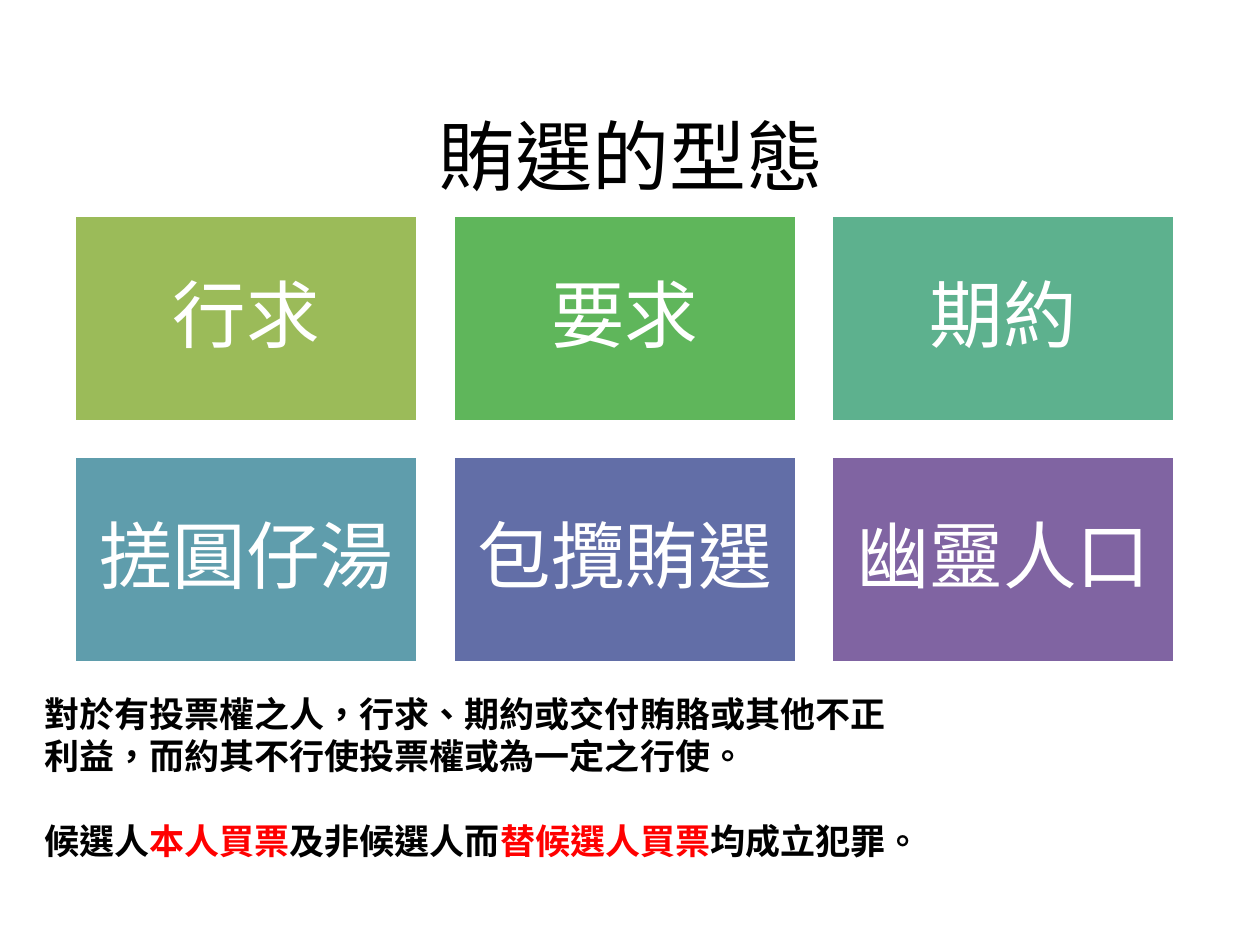
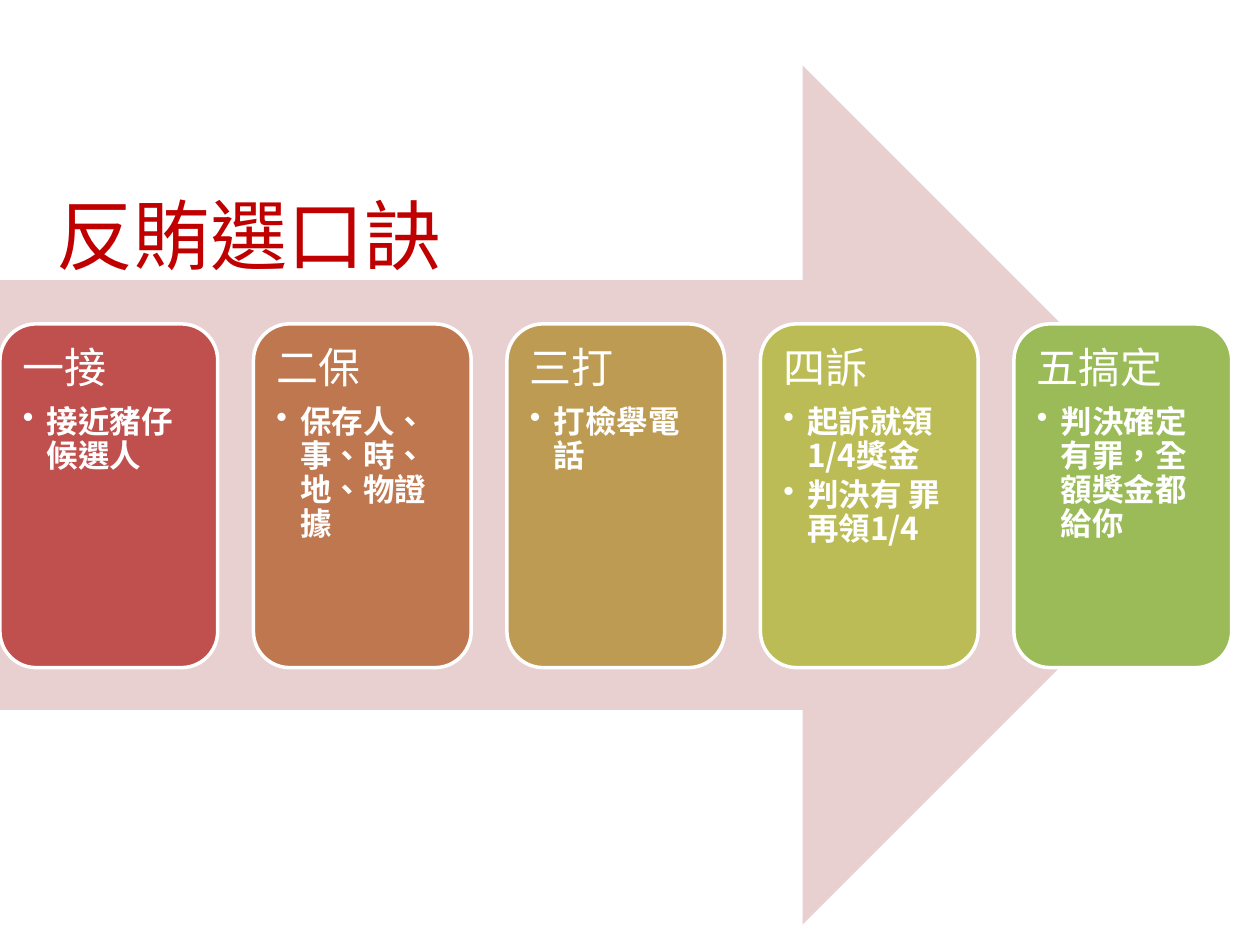
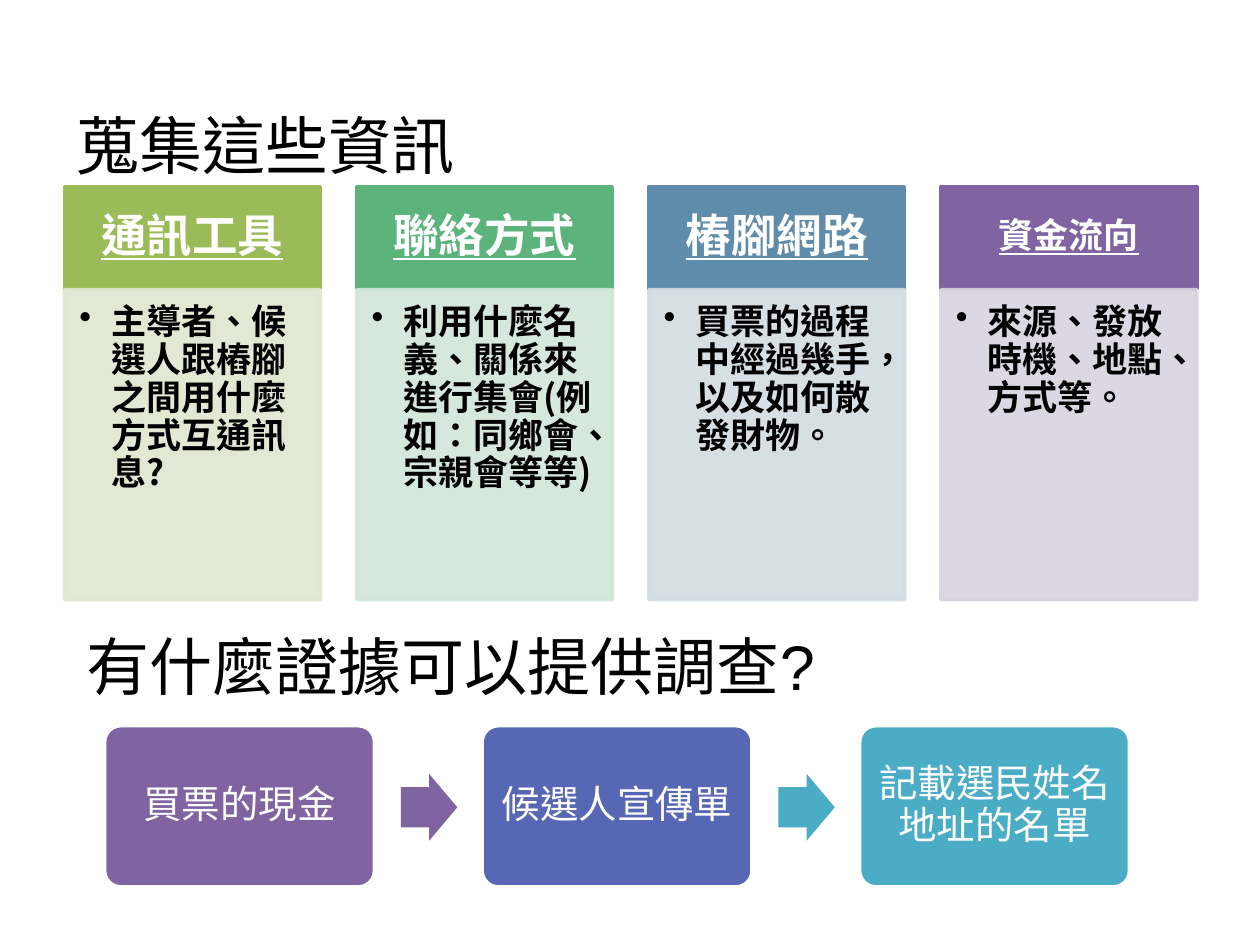
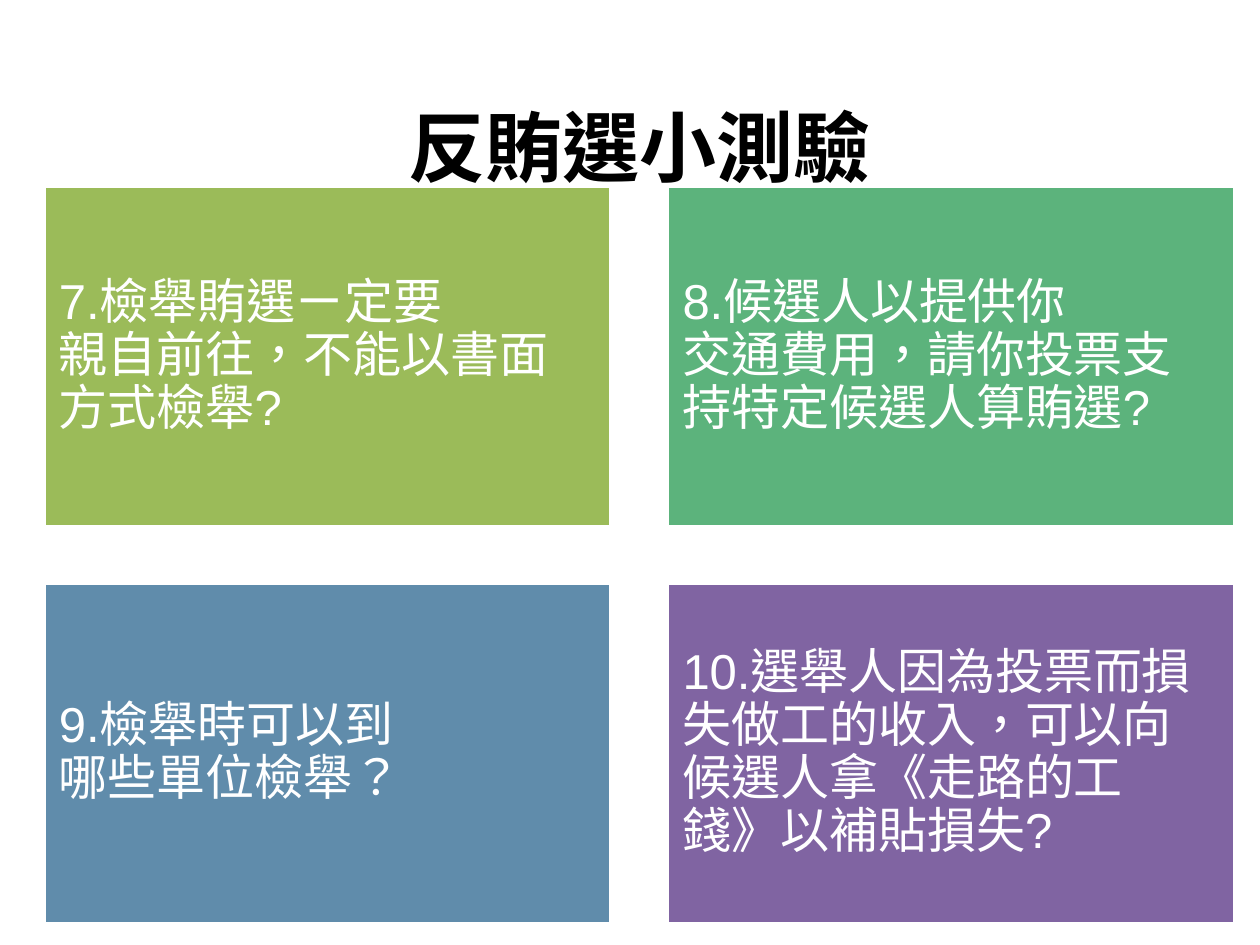
from lxml import etree
from pptx import Presentation, util as u
from pptx.dml.color import RGBColor
from pptx.enum import lang, shapes, text
from pptx.oxml.ns import qn

COLORS = {
    "black": "000000", "white": "FFFFFF", "red": "FF0000", "crimson": "C00000",
    "olive": "9BBB59", "green": "5FB65B", "teal": "5DB18E", "aqua": "5F9DAC",
    "indigo": "626EA7", "purple": "8064A2", "mint": "5CB37C", "steel": "608CAB",
    "brick": "C0504D", "rust": "BF7750", "ochre": "BD9B53", "lime": "BCBC56",
    "blush": "E8D0D0", "violet": "5767B4", "cyan": "4BACC6",
    "pale_olive": "DEE7D1", "pale_mint": "D2E5D9",
    "pale_steel": "D2DCE2", "pale_purple": "D8D3E0",
}
LIGHT, HEAVY = "Arial", "Noto Sans CJK SC"
LEFT, CENTER = text.PP_ALIGN.LEFT, text.PP_ALIGN.CENTER
TOP, MIDDLE = text.MSO_ANCHOR.TOP, text.MSO_ANCHOR.MIDDLE
RECT = shapes.MSO_SHAPE.RECTANGLE
ROUND = shapes.MSO_SHAPE.ROUNDED_RECTANGLE
ARROW = shapes.MSO_SHAPE.RIGHT_ARROW


def add_part(slide, box, kind=None, fill=None, line=None):
    lengths = [u.Cm(length) for length in box]
    if kind is None:
        return slide.shapes.add_textbox(*lengths)
    part = slide.shapes.add_shape(kind, *lengths)
    part.shadow.inherit = False
    part.fill.solid()
    part.fill.fore_color.rgb = RGBColor.from_string(COLORS[fill])
    if line:
        part.line.color.rgb = RGBColor.from_string(COLORS[line])
        part.line.width = u.Pt(2)
    else:
        part.line.fill.background()
    return part


def write(part, lines, size, color="white", font=LIGHT, bold=False, align=LEFT,
          anchor=MIDDLE, insets=(0.25, 0.13, 0.25, 0.13), spacing=0.9, bullet=None):
    frame = part.text_frame
    frame.word_wrap = True
    frame.vertical_anchor = anchor
    (frame.margin_left, frame.margin_top,
     frame.margin_right, frame.margin_bottom) = [u.Cm(inset) for inset in insets]
    if frame.text:
        paragraphs = [frame.add_paragraph() for _ in lines]
    else:
        paragraphs = [frame.paragraphs[0]] + [frame.add_paragraph() for _ in lines[1:]]
    for paragraph, line in zip(paragraphs, lines):
        paragraph.text = line
        paragraph.alignment = align
        paragraph.line_spacing = spacing
        if bullet:
            properties = paragraph._p.get_or_add_pPr()
            properties.set("marL", str(u.Cm(bullet)))
            properties.set("indent", str(-u.Cm(bullet)))
            etree.SubElement(properties, qn("a:buChar"), char="•")
            paragraph.space_after = u.Pt(3)
        for run in paragraph.runs:
            run.font.name = font
            run.font.size = u.Pt(size)
            run.font.bold = bold
            run.font.language_id = lang.MSO_LANGUAGE_ID.TRADITIONAL_CHINESE
            run.font.color.rgb = RGBColor.from_string(COLORS[color])
    return paragraphs


deck = Presentation()
deck.slide_width, deck.slide_height = u.Cm(25.4), u.Cm(19.05)
blank = deck.slide_layouts[6]
types, slogan, evidence, quiz = [deck.slides.add_slide(blank) for _ in range(4)]

titles = [
    (types, "賄選的型態", 1.3, 1.52, 44, "black", CENTER, False),
    (slogan, "反賄選口訣", 0.89, 3.12, 44, "crimson", LEFT, False),
    (evidence, "蒐集這些資訊", 1.3, 1.32, 36, "black", LEFT, False),
    (quiz, "反賄選小測驗", 1.47, 1.35, 44, "black", CENTER, True),
]

bribery_types = [
    ("行求", "olive"), ("要求", "green"), ("期約", "teal"),
    ("搓圓仔湯", "aqua"), ("包攬賄選", "indigo"), ("幽靈人口", "purple"),
]
for i, (label, color) in enumerate(bribery_types):
    row, column = divmod(i, 3)
    tile = add_part(types, (1.5 + 7.63 * column, 4.34 + 4.86 * row, 6.93, 4.16),
                    RECT, color, "white")
    write(tile, [label], 42, align=CENTER, insets=[0.43] * 4)

law = add_part(types, (0.64, 13.84, 18.16, 5.2))
statute, offence = write(law, [
    "對於有投票權之人，行求、期約或交付賄賂或其他不正利益，而約其不行使投票權或為一定之行使。",
    "候選人",
], 20, "black", HEAVY, True, anchor=TOP, spacing=1.0)
offence.space_before = u.Pt(24)
for words, color in [("本人買票", "red"), ("及非候選人而", "black"),
                     ("替候選人買票", "red"), ("均成立犯罪。", "black")]:
    phrase = offence.add_run()
    phrase.text = words
    phrase.font.name, phrase.font.size, phrase.font.bold = HEAVY, u.Pt(20), True
    phrase.font.language_id = lang.MSO_LANGUAGE_ID.TRADITIONAL_CHINESE
    phrase.font.color.rgb = RGBColor.from_string(COLORS[color])

add_part(slogan, (0, 1.32, 24.84, 17.32), ARROW, "blush")
steps = [
    ("一接", ["接近豬仔候選人"], "brick"),
    ("二保", ["保存人、事、時、地、物證據"], "rust"),
    ("三打", ["打檢舉電話"], "ochre"),
    ("四訴", ["起訴就領1/4獎金", "判決有 罪再領1/4"], "lime"),
    ("五搞定", ["判決確定有罪，全額獎金都給你"], "olive"),
]
for i, (step, details, color) in enumerate(steps):
    card = add_part(slogan, (5.11 * i, 6.53, 4.39, 6.93), ROUND, color, "white")
    card_insets = [0.25] * 4
    heading, = write(card, [step], 24, anchor=TOP, insets=card_insets)
    heading.space_after = u.Pt(8)
    write(card, details, 18, font=HEAVY, bold=True, anchor=TOP,
          insets=card_insets, bullet=0.48)

clues = [
    ("通訊工具", "主導者、候選人跟樁腳之間用什麼方式互通訊息?", "olive", 26),
    ("聯絡方式", "利用什麼名義、關係來進行集會(例如：同鄉會、宗親會等等)", "mint", 26),
    ("樁腳網路", "買票的過程中經過幾手，以及如何散發財物。", "steel", 26),
    ("資金流向", "來源、發放時機、地點、方式等。", "purple", 20),
]
for i, (clue, details, color, size) in enumerate(clues):
    left = 1.3 + 5.89 * i
    header = add_part(evidence, (left, 3.76, 5.16, 2.06), RECT, color, color)
    heading, = write(header, [clue], size, font=HEAVY, bold=True, align=CENTER,
                     insets=(0.5, 0.3, 0.5, 0.3))
    heading.runs[0].font.underline = True
    pale = "pale_" + color
    body = add_part(evidence, (left, 5.84, 5.16, 6.25), RECT, pale, pale)
    for tint in body._element.spPr.iter(qn("a:srgbClr")):
        etree.SubElement(tint, qn("a:alpha"), val="90000")
    write(body, [details], 20, "black", HEAVY, True, anchor=TOP,
          insets=(0.3, 0.3, 0.41, 0.43), bullet=0.64)

question = add_part(evidence, (1.5, 12.52, 17, 1.8))
write(question, ["有什麼證據可以提供調查?"], 36, "black", anchor=TOP, spacing=1.0)

proofs = [("買票的現金", "purple", "purple"), ("候選人宣傳單", "violet", "cyan"),
          ("記載選民姓名地址的名單", "cyan", None)]
for i, (proof, color, arrow_color) in enumerate(proofs):
    left = 2.11 + 7.61 * i
    item = add_part(evidence, (left, 14.63, 5.44, 3.25), ROUND, color, "white")
    item.adjustments[0] = 0.1
    write(item, [proof], 22, align=CENTER, insets=[0.23] * 4)
    if arrow_color:
        onward = add_part(evidence, (left + 5.97, 15.6, 1.14, 1.35), ARROW, arrow_color)
        onward.adjustments[0] = 0.6

questions = [
    ("7.檢舉賄選ㄧ定要\v親自前往，不能以書面方式檢舉?", "olive"),
    ("8.候選人以提供你\v交通費用，請你投票支持特定候選人算賄選?", "mint"),
    ("9.檢舉時可以到\v哪些單位檢舉？", "steel"),
    ("10.選舉人因為投票而損失做工的收入，可以向候選人拿《走路的工錢》以補貼損失?", "purple"),
]
for i, (wording, color) in enumerate(questions):
    row, column = divmod(i, 2)
    panel = add_part(quiz, (0.89 + 12.57 * column, 3.76 + 8 * row, 11.43, 6.86),
                     RECT, color, "white")
    write(panel, [wording], 28, insets=[0.3] * 4)

for slide, title, left, top, size, color, align, bold in titles:
    heading = add_part(slide, (left, top, 22.86, 3.18))
    write(heading, [title], size, color, bold=bold, align=align, spacing=1.0)

deck.save("out.pptx")
